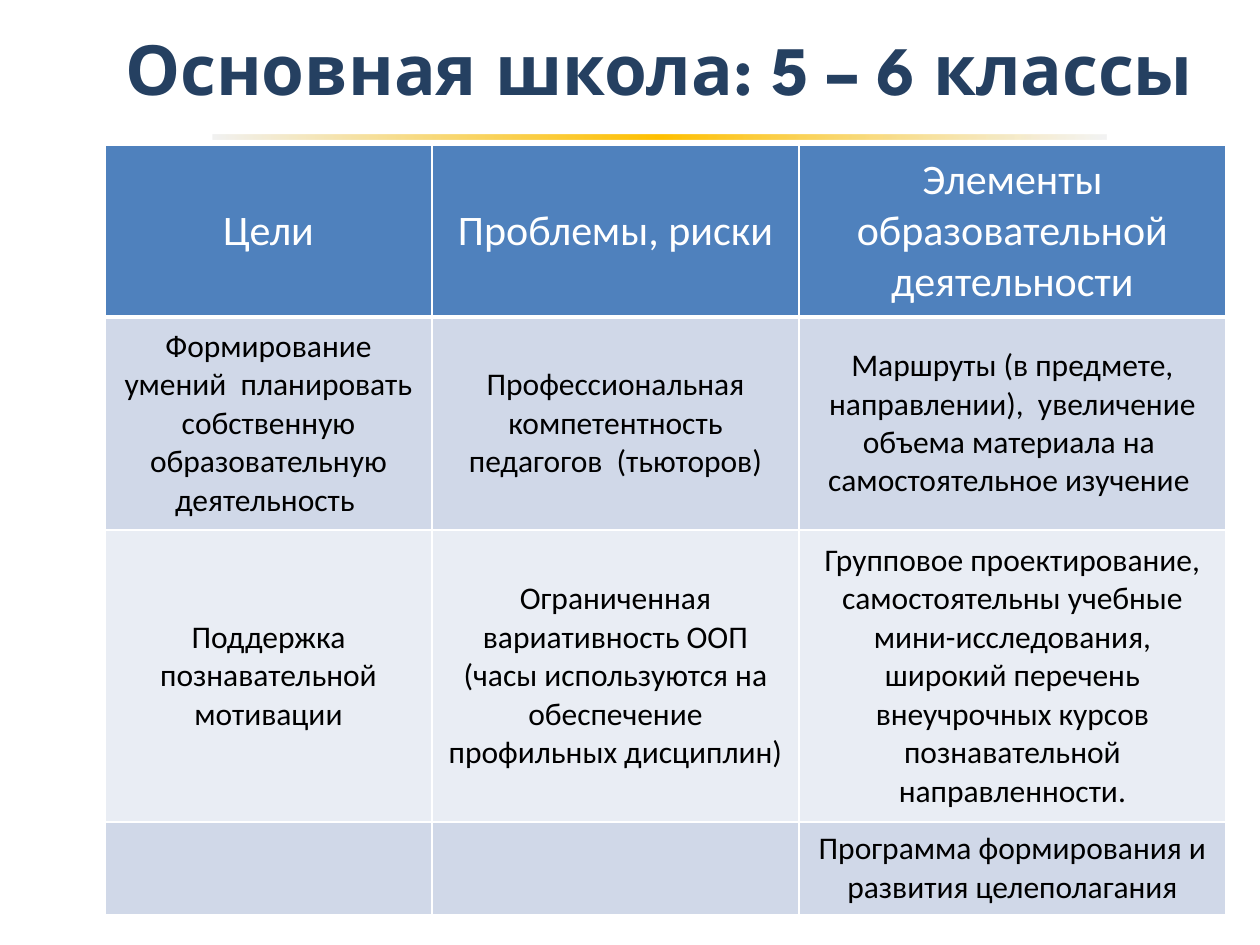
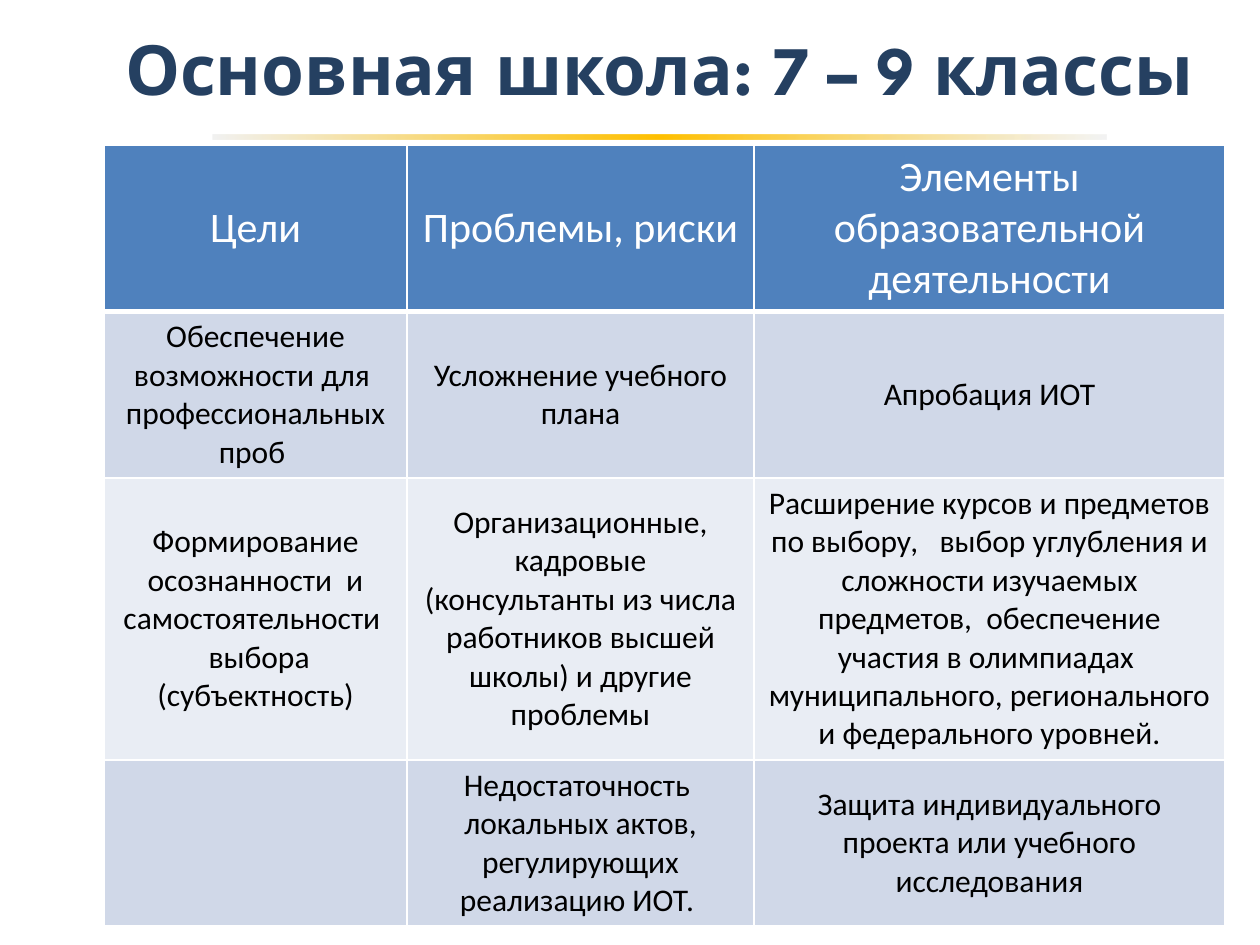
from lxml import etree
from pptx import Presentation
from pptx.dml.color import RGBColor
from pptx.enum import shapes, text
from pptx.oxml import parse_xml
from pptx.oxml.ns import nsdecls, qn
from pptx.util import Emu, Pt

PX = 914400 / 126
TITLE_FONT, BODY_FONT = "League Spartan", "Calibri"
NAVY, BLUE, WHITE, BLACK = "254061", "4F81BD", "FFFFFF", "000000"
ROW_FILLS = ["D0D8E8", "E9EDF4"]
# position in percent, colour, opacity in percent
BAND_STOPS = [(0, "F2F2F2", 100), (50, "FFC000", 100), (100, "F2F2F2", 80)]
BAND_BOX = (213, 135, 893, 5)
HEADINGS = ["Цели", "Проблемы, риски", "Элементы образовательной деятельности"]

SLIDES = [
    dict(
        title="Основная школа: 5 – 6 классы",
        title_box=(98, 20, 1123, 135),
        table_origin=(105, 145),
        columns=[327, 367, 427],
        rows=[172, 213, 292, 93],
        body=[
            ["Формирование умений  планировать собственную образовательную деятельность ",
             "Профессиональная компетентность педагогов  (тьюторов)",
             "Маршруты (в предмете, направлении),  увеличение объема материала на  "
             "самостоятельное изучение "],
            ["Поддержка познавательной мотивации",
             "Ограниченная вариативность ООП (часы используются на обеспечение "
             "профильных дисциплин)",
             "Групповое проектирование, самостоятельны учебные мини-исследования, "
             "широкий перечень внеучрочных курсов познавательной направленности."],
            ["", "", "Программа формирования и развития целеполагания"],
        ],
    ),
    dict(
        title="Основная школа: 7 – 9 классы",
        title_box=(98, 20, 1123, 168),
        table_origin=(104, 145),
        columns=[303, 347, 471],
        rows=[166, 166, 282, 166],
        body=[
            ["Обеспечение возможности для  профессиональных проб ",
             "Усложнение учебного плана",
             "Апробация ИОТ"],
            ["Формирование осознанности  и самостоятельности \n выбора (субъектность)",
             "Организационные, кадровые (консультанты из числа работников высшей школы) "
             "и другие проблемы",
             "Расширение курсов и предметов по выбору,   выбор углубления и сложности "
             "изучаемых предметов,  обеспечение участия в олимпиадах  муниципального, "
             "регионального и федерального уровней."],
            ["",
             "Недостаточность  локальных актов, регулирующих реализацию ИОТ. ",
             "Защита индивидуального проекта или учебного исследования"],
        ],
    ),
]


def px(length):
    return Emu(round(length * PX))


def color(value):
    return RGBColor.from_string(value)


def write(frame, content, font_name, size, font_color, bold=False):
    """Fill a text frame with centred paragraphs, one per line of content."""
    for index, line in enumerate(content.split("\n")):
        paragraph = frame.add_paragraph() if index else frame.paragraphs[0]
        paragraph.alignment = text.PP_ALIGN.CENTER
        run = paragraph.add_run()
        run.text = line
        run.font.name = font_name
        run.font.size = Pt(size)
        run.font.bold = bold
        run.font.color.rgb = color(font_color)


def add_title(slide, content, box):
    title = slide.shapes.title
    title.left, title.top, title.width, title.height = map(px, box)
    frame = title.text_frame
    frame.word_wrap = True
    frame.auto_size = text.MSO_AUTO_SIZE.NONE
    frame.vertical_anchor = text.MSO_ANCHOR.TOP
    write(frame, content, TITLE_FONT, 39.6, NAVY, bold=True)


def set_borders(cell, bottom):
    """Draw white borders, 1 pt wide except for the given bottom width."""
    properties = cell._tc.get_or_add_tcPr()
    for side, width in [("L", 1), ("R", 1), ("T", 1), ("B", bottom)]:
        properties.append(parse_xml(
            f'<a:ln{side} {nsdecls("a")} w="{Pt(width)}"><a:solidFill>'
            f'<a:srgbClr val="{WHITE}"/></a:solidFill></a:ln{side}>'))


def add_goals_table(slide, origin, columns, rows, body):
    box = (*origin, sum(columns), sum(rows))
    table = slide.shapes.add_table(len(rows), len(columns), *map(px, box)).table
    for column, width in zip(table.columns, columns):
        column.width = px(width)
    for row, height in zip(table.rows, rows):
        row.height = px(height)
    for row_index, contents in enumerate([HEADINGS] + body):
        is_header = row_index == 0
        fill = BLUE if is_header else ROW_FILLS[(row_index - 1) % 2]
        size, font_color = (24, WHITE) if is_header else (18, BLACK)
        for column_index, content in enumerate(contents):
            cell = table.cell(row_index, column_index)
            cell.vertical_anchor = text.MSO_ANCHOR.MIDDLE
            set_borders(cell, bottom=3 if is_header else 1)
            cell.fill.solid()
            cell.fill.fore_color.rgb = color(fill)
            if content:
                write(cell.text_frame, content, BODY_FONT, size, font_color)


def add_gold_band(slide):
    band = slide.shapes.add_shape(shapes.MSO_SHAPE.RECTANGLE, *map(px, BAND_BOX))
    band.shadow.inherit = False
    band.line.fill.background()
    band.fill.gradient()
    band.fill.gradient_angle = 0
    stops = band._element.spPr.find(qn("a:gradFill")).find(qn("a:gsLst"))
    for stop in list(stops):
        stops.remove(stop)
    for position, value, opacity in BAND_STOPS:
        stop = etree.SubElement(stops, qn("a:gs"), pos=str(position * 1000))
        stop_color = etree.SubElement(stop, qn("a:srgbClr"), val=value)
        if opacity < 100:
            etree.SubElement(stop_color, qn("a:alpha"), val=str(opacity * 1000))


def add_goals_slide(presentation, content):
    slide = presentation.slides.add_slide(presentation.slide_layouts[5])
    add_title(slide, content["title"], content["title_box"])
    add_goals_table(slide, content["table_origin"], content["columns"],
                    content["rows"], content["body"])
    add_gold_band(slide)


def main():
    presentation = Presentation()
    presentation.slide_width, presentation.slide_height = px(1260), px(945)
    for content in SLIDES:
        add_goals_slide(presentation, content)
    presentation.save("out.pptx")


if __name__ == "__main__":
    main()
